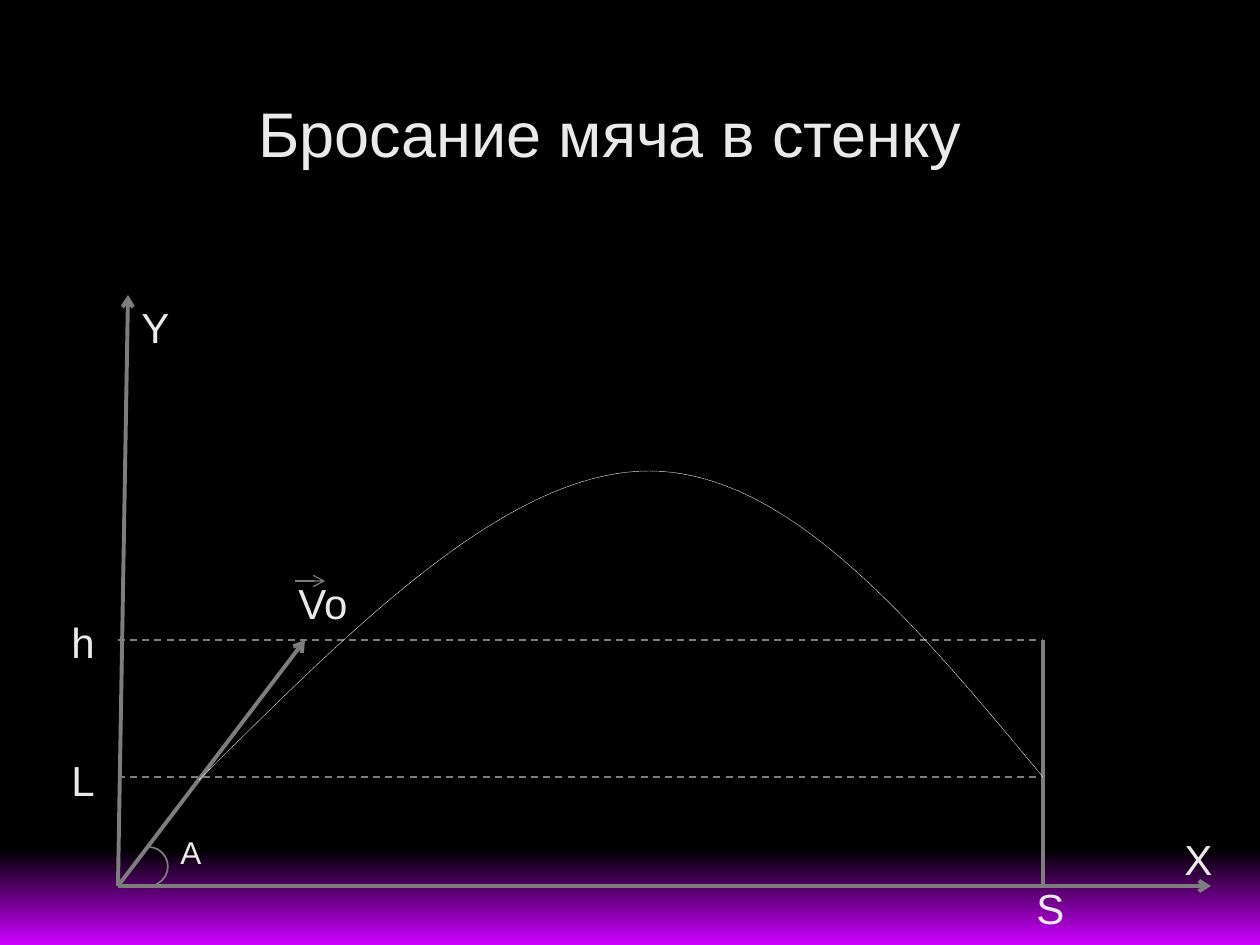
from dataclasses import dataclass
from typing import Optional

import pptx
import pptx.dml.color
import pptx.enum.dml
import pptx.enum.shapes
import pptx.enum.text
import pptx.oxml.ns
import pptx.util
from lxml import etree

EMU_PER_PX = 914400 / 126
COLORS = {
    "background": "000000",
    "glow": "CC00FF",
    "drawing": "7D7D7D",
    "trajectory": "F1F1F1",
    "text": "EAEAEA",
}
DASH = pptx.enum.dml.MSO_LINE.DASH
FINE_DASH = pptx.enum.dml.MSO_LINE.SQUARE_DOT
Point = tuple[int, int]


@dataclass
class Segment:
    start: Point
    end: Point
    width: float
    arrow: bool = False
    dash: Optional[int] = None


@dataclass
class Label:
    text: str
    left: int
    top: int
    width: int
    height: int = 63
    size: int = 24


def px(length: float) -> int:
    return round(length * EMU_PER_PX)


def color(name: str) -> pptx.dml.color.RGBColor:
    return pptx.dml.color.RGBColor.from_string(COLORS[name])


def apply(target, values: dict) -> None:
    for name, value in values.items():
        setattr(target, name, value)


def style_line(line, ink: str, width: float, dash: Optional[int] = None) -> None:
    line.fill.solid()
    line.fill.fore_color.rgb = color(ink)
    apply(line, {"width": pptx.util.Pt(width), "dash_style": dash})


def draw_segment(shapes, segment: Segment) -> None:
    connector = shapes.add_connector(
        pptx.enum.shapes.MSO_CONNECTOR.STRAIGHT,
        *map(px, segment.start + segment.end))
    style_line(connector.line, "drawing", segment.width, segment.dash)
    properties = connector._element.spPr
    if segment.arrow:
        outline = properties.find(pptx.oxml.ns.qn("a:ln"))
        etree.SubElement(outline, pptx.oxml.ns.qn("a:tailEnd"), type="arrow")
    etree.SubElement(properties, pptx.oxml.ns.qn("a:effectLst"))


def draw_label(shapes, label: Label) -> None:
    box = shapes.add_textbox(
        *map(px, (label.left, label.top, label.width, label.height)))
    apply(box.text_frame, {
        "word_wrap": True,
        "auto_size": pptx.enum.text.MSO_AUTO_SIZE.SHAPE_TO_FIT_TEXT,
    })
    run = box.text_frame.paragraphs[0].add_run()
    run.text = label.text
    apply(run.font, {"name": "Arial", "size": pptx.util.Pt(label.size)})
    run.font.color.rgb = color("text")


def draw_curve(shapes, start: Point, controls: list[Point]) -> None:
    """Draw cubic Bezier pieces, three control points to each piece."""
    builder = shapes.build_freeform(*start, scale=EMU_PER_PX)
    builder.add_line_segments(controls, close=False)
    curve = builder.convert_to_shape()
    curve.shadow.inherit = False
    curve.fill.background()
    style_line(curve.line, "trajectory", 0.25, FINE_DASH)
    # Join each three straight steps into one cubic step
    steps = list(curve._element.iter(pptx.oxml.ns.qn("a:lnTo")))
    for first in range(0, len(steps), 3):
        cubic = etree.Element(pptx.oxml.ns.qn("a:cubicBezTo"))
        steps[first].addprevious(cubic)
        for step in steps[first:first + 3]:
            cubic.append(step[0])
            step.getparent().remove(step)


def draw_glow(shapes) -> None:
    glow = shapes.add_shape(pptx.enum.shapes.MSO_SHAPE.RECTANGLE,
                            *map(px, (0, 849, 1260, 96)))
    glow.shadow.inherit = False
    glow.line.fill.background()
    glow.fill.gradient()
    glow.fill.gradient_angle = 270
    for stop, name in zip(glow.fill.gradient_stops, ("background", "glow")):
        stop.color.rgb = color(name)


def draw_angle(shapes) -> None:
    angle = shapes.add_shape(pptx.enum.shapes.MSO_SHAPE.ARC,
                             *map(px, (129, 847, 39, 39)))
    angle.shadow.inherit = False
    angle.adjustments[0] = 162
    angle.adjustments[1] = 39.6
    angle.fill.background()
    style_line(angle.line, "drawing", 1)


ORIGIN = (118, 886)
WALL_X, WALL_TOP, HIT_Y = 1043, 640, 777

SEGMENTS = [
    Segment(ORIGIN, (128, 295), 2.25, arrow=True),  # Y axis
    Segment(ORIGIN, (1211, 886), 2.25, arrow=True),  # X axis
    Segment(ORIGIN, (305, WALL_TOP), 2.25, arrow=True),  # initial velocity
    Segment((118, HIT_Y), (WALL_X, HIT_Y), 1, dash=DASH),
    Segment((118, WALL_TOP), (WALL_X, WALL_TOP), 1, dash=DASH),
    Segment((WALL_X, WALL_TOP), (WALL_X, 886), 2.25),  # wall
    Segment((295, 581), (325, 581), 0.75, arrow=True),  # vector mark over Vo
]
LABELS = [
    Label("Х", 1172, 827, 49),
    Label("Y", 129, 295, 59),
    Label("Vo", 286, 571, 129),
    Label("A", 168, 827, 98, 50, 18),
    Label("h", 59, 610, 49),
    Label("L", 59, 748, 49),
    Label("S", 1024, 876, 49),
    Label("Бросание мяча в стенку", 246, 88, 974, 89, 36),
]


def main() -> None:
    presentation = pptx.Presentation()
    apply(presentation, {"slide_width": px(1260), "slide_height": px(945)})
    slide = presentation.slides.add_slide(presentation.slide_layouts[6])
    slide.background.fill.solid()
    slide.background.fill.fore_color.rgb = color("background")

    # Glow along the bottom edge
    draw_glow(slide.shapes)

    # Axes, wall, levels and vectors
    for segment in SEGMENTS:
        draw_segment(slide.shapes, segment)

    # Flight of the ball and launch angle
    draw_curve(slide.shapes, (199, 780), [
        (354, 626), (508, 471), (649, 471),
        (789, 471), (916, 624), (WALL_X, HIT_Y),
    ])
    draw_angle(slide.shapes)

    # Title and labels
    for label in LABELS:
        draw_label(slide.shapes, label)

    presentation.save("out.pptx")


if __name__ == "__main__":
    main()
